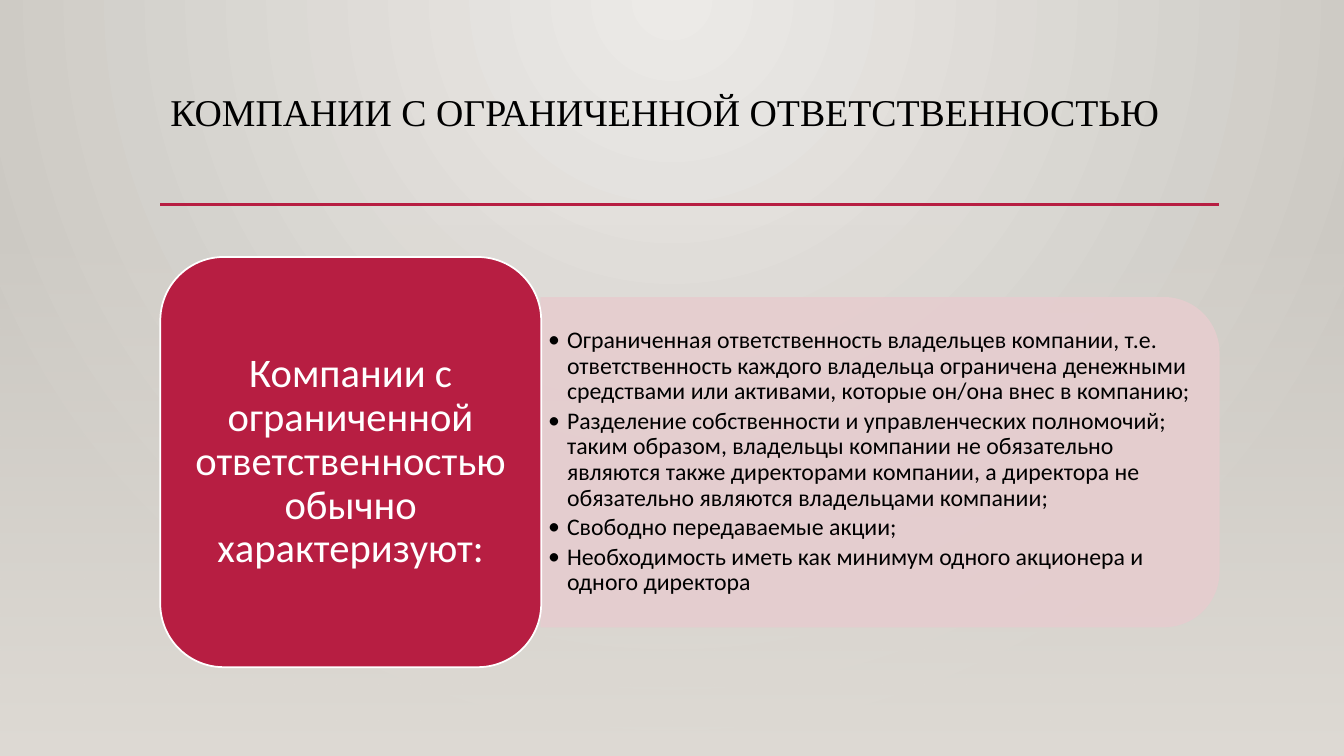
from lxml import etree
from pptx import Presentation
from pptx.dml.color import RGBColor
from pptx.enum.shapes import MSO_CONNECTOR, MSO_SHAPE
from pptx.enum.text import MSO_ANCHOR as Anchor, MSO_AUTO_SIZE as AutoSize, PP_ALIGN as Align
from pptx.oxml.ns import qn
from pptx.util import Pt

CRIMSON, PINK, WHITE, BLACK = "B71E42", "E6CDCF", "FFFFFF", "000000"
LEFT, RIGHT = 114.5, 870.5
CARD_RIGHT = 386.6
PANEL_TOP, PANEL_HEIGHT = 212.8, 234.7

HEADING = "КОМПАНИИ С ОГРАНИЧЕННОЙ ОТВЕТСТВЕННОСТЬЮ"
CARD_TEXT = "Компании с ограниченной ответственностью обычно характеризуют:"
FEATURES = [
    "Ограниченная ответственность владельцев компании, т.е. ответственность каждого "
    "владельца ограничена денежными средствами или активами, которые он/она внес в компанию;",
    "Разделение собственности и управленческих полномочий; таким образом, владельцы компании "
    "не обязательно являются также директорами компании, а директора не обязательно являются "
    "владельцами компании;",
    "Свободно передаваемые акции;",
    "Необходимость иметь как минимум одного акционера и одного директора",
]


def rgb(value):
    return RGBColor.from_string(value)


def set_alpha(color, percent):
    etree.SubElement(color, qn("a:alpha"), val=str(percent * 1000))


presentation = Presentation()
presentation.slide_width, presentation.slide_height = Pt(960), Pt(540)
slide = presentation.slides.add_slide(presentation.slide_layouts[5])
shapes = slide.shapes

# Background: a radial gradient centred on the top edge
background = slide.background.fill
background.gradient()
for stop, color in zip(background.gradient_stops, ("ECEAE7", "CAC7C1")):
    stop.color.rgb = rgb(color)
gradient = next(slide.element.iter(qn("a:gradFill")))
gradient.remove(gradient.find(qn("a:lin")))
radial = etree.SubElement(gradient, qn("a:path"), path="circle")
etree.SubElement(radial, qn("a:fillToRect"), l="43000", t="0", r="43000", b="100000")

# Lower haze fading in downwards
haze = shapes.add_shape(MSO_SHAPE.RECTANGLE, 0, Pt(159), Pt(960), Pt(381))
haze.shadow.inherit = False
haze.line.fill.background()
haze.fill.gradient()
haze.fill.gradient_angle = 270
for stop in haze.fill.gradient_stops:
    stop.color.rgb = rgb("DFDBD5")
set_alpha(next(haze.element.iter(qn("a:srgbClr"))), 0)

# Title and rule
title = shapes.title
title.left, title.top, title.width, title.height = Pt(LEFT), Pt(63.4), Pt(RIGHT - LEFT), Pt(82.8)
title.text_frame.text = HEADING
title.text_frame.auto_size = AutoSize.NONE
title.text_frame.vertical_anchor = Anchor.TOP
paragraph = title.text_frame.paragraphs[0]
paragraph.alignment = Align.LEFT
paragraph.line_spacing = 0.9
font = paragraph.runs[0].font
font.name, font.size, font.color.rgb = "Times New Roman", Pt(27), rgb(BLACK)

rule = shapes.add_connector(MSO_CONNECTOR.STRAIGHT, Pt(LEFT), Pt(146), Pt(RIGHT), Pt(146))
rule.line.color.rgb, rule.line.width = rgb(CRIMSON), Pt(2.5)
etree.SubElement(rule.element.spPr, qn("a:effectLst"))

# Panel: an upright shape turned a quarter, so its width is the visible height
panel_length = RIGHT - CARD_RIGHT
panel = shapes.add_shape(
    MSO_SHAPE.ROUND_2_SAME_RECTANGLE,
    Pt((CARD_RIGHT + RIGHT - PANEL_HEIGHT) / 2),
    Pt(PANEL_TOP + (PANEL_HEIGHT - panel_length) / 2),
    Pt(PANEL_HEIGHT), Pt(panel_length))
panel.rotation = 90
card = shapes.add_shape(
    MSO_SHAPE.ROUNDED_RECTANGLE, Pt(LEFT), Pt(183.6), Pt(CARD_RIGHT - LEFT), Pt(293))
for shape, fill, line in ((panel, PINK, PINK), (card, CRIMSON, WHITE)):
    shape.shadow.inherit = False
    shape.fill.solid()
    shape.fill.fore_color.rgb = rgb(fill)
    shape.line.color.rgb, shape.line.width = rgb(line), Pt(1.25)
for color in panel.element.spPr.iter(qn("a:srgbClr")):
    set_alpha(color, 90)

# The rounded card already insets its text by its corners, so its margins stay small
features = shapes.add_textbox(Pt(CARD_RIGHT), Pt(224.1), Pt(472.3), Pt(211.7))
for shape, lines, side, edge, size, color, align, gap in (
        (card, [CARD_TEXT], 8, 4, 29, WHITE, Align.CENTER, 0),
        (features, FEATURES, 5, 2.9, 17, BLACK, Align.LEFT, 2.6)):
    frame = shape.text_frame
    frame.word_wrap = True
    frame.auto_size = AutoSize.NONE
    frame.vertical_anchor = Anchor.MIDDLE
    frame.margin_left = frame.margin_right = Pt(side)
    frame.margin_top = frame.margin_bottom = Pt(edge)
    frame.text = "\n".join(lines)
    for paragraph in frame.paragraphs:
        paragraph.alignment = align
        paragraph.line_spacing = 0.9
        paragraph.space_after = Pt(gap)
        if shape is features:
            properties = paragraph._p.get_or_add_pPr()
            properties.set("marL", str(Pt(13.5)))
            properties.set("indent", str(-Pt(13.5)))
            etree.SubElement(properties, qn("a:buFont"), typeface="Calibri")
            etree.SubElement(properties, qn("a:buChar"), char="•")
        font = paragraph.runs[0].font
        font.name, font.size, font.color.rgb = "Calibri", Pt(size), rgb(color)

presentation.save("out.pptx")
